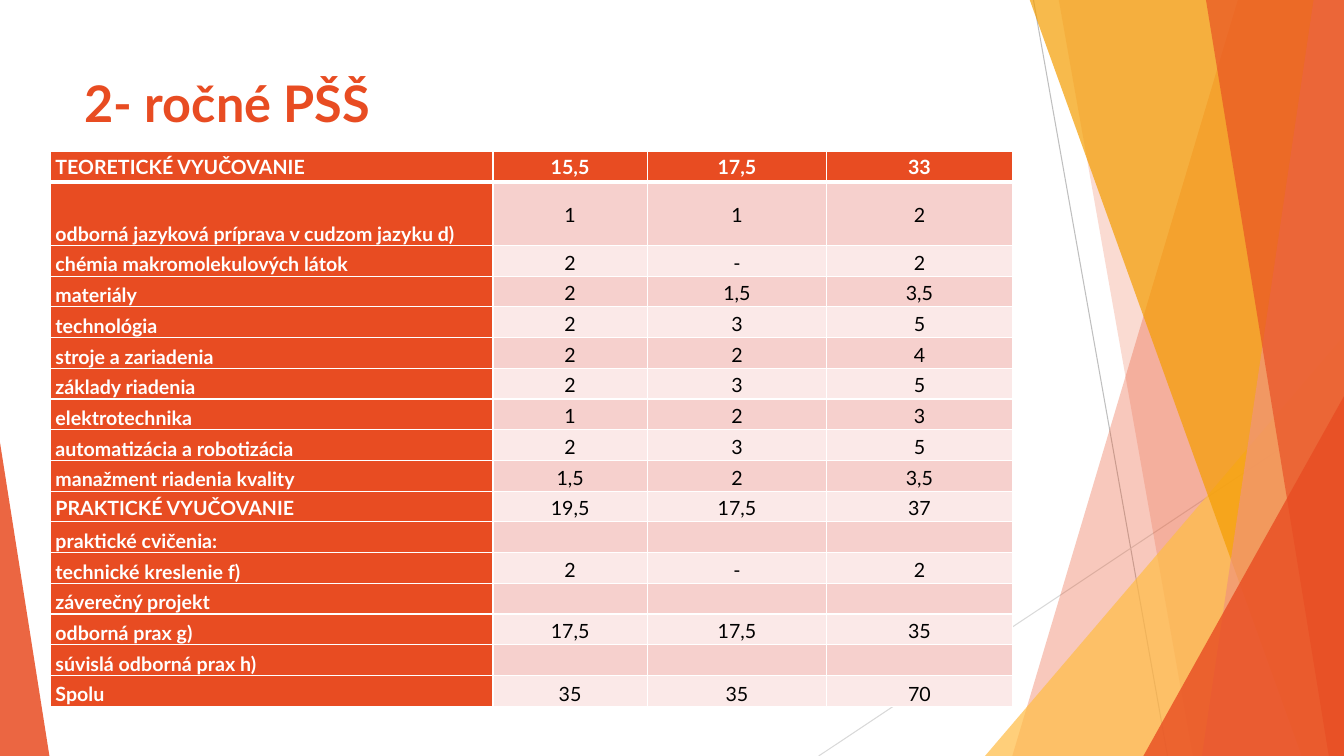
"""Build the slide with the weekly lesson table of the two-year course."""
from dataclasses import dataclass

from lxml import etree
from pptx import Presentation
from pptx.dml.color import RGBColor
from pptx.enum.shapes import MSO_CONNECTOR, MSO_SHAPE
from pptx.enum.text import MSO_ANCHOR, PP_ALIGN
from pptx.oxml.ns import qn
from pptx.util import Inches, Pt

TRIANGLE = MSO_SHAPE.ISOSCELES_TRIANGLE
STRAIGHT = MSO_CONNECTOR.STRAIGHT
TOP, MIDDLE, BOTTOM = MSO_ANCHOR.TOP, MSO_ANCHOR.MIDDLE, MSO_ANCHOR.BOTTOM
LEFT, CENTER = PP_ALIGN.LEFT, PP_ALIGN.CENTER

WIDTH, HEIGHT = 13.33, 7.5
BLEED = -0.01
FONT = "Lato"
COLORS = {
    "orange": "E84C22", "amber": "F49D00", "yellow": "FFBD47", "salmon": "F1947A",
    "white": "FFFFFF", "black": "000000", "pink": "F6D0CD", "pale": "FBE9E8",
    "grey": "BFBFBF", "silver": "D9D9D9",
}


@dataclass
class Ray:
    x1: float
    y1: float
    x2: float
    y2: float
    color: str


@dataclass
class Band:
    top_x: float
    bottom_x: float
    color: str
    alpha: int


@dataclass
class Corner:
    x: float
    y: float
    width: float
    apex: float
    color: str
    alpha: int


@dataclass
class Subject:
    name: str
    hours: tuple[str, str, str]
    name_anchor: MSO_ANCHOR = BOTTOM
    hours_anchor: MSO_ANCHOR = MIDDLE
    height: float = 0.305


RAYS = [
    Ray(10.25, 0, 11.58, HEIGHT, "grey"),
    Ray(WIDTH, 4.03, 8.12, HEIGHT, "silver"),
]
FACETS = [
    Band(12.28, 10.04, "orange", 30),
    Band(10.5, 11.83, "orange", 20),
    Corner(9.77, 3.33, 3.56, 1, "yellow", 72),
    Band(10.21, 12.91, "amber", 70),
    Band(13.03, 11.92, "salmon", 70),
    Band(11.96, 13.18, "orange", 65),
    Corner(11.34, 3.93, 1.99, 1, "orange", 80),
    Corner(0, 4.39, 0.49, 0, "orange", 85),
]
COLUMNS = [4.39, 1.53, 1.78, 1.84]
NO_HOURS = ("", "", "")
SUBJECTS = [
    Subject("TEORETICKÉ VYUČOVANIE", ("15,5", "17,5", "33"), TOP, TOP),
    Subject("odborná jazyková príprava v cudzom jazyku d)", ("1", "1", "2"), height=0.63),
    Subject("chémia makromolekulových látok", ("2", "-", "2")),
    Subject("materiály", ("2", "1,5", "3,5")),
    Subject("technológia", ("2", "3", "5")),
    Subject("stroje a zariadenia", ("2", "2", "4")),
    Subject("základy riadenia", ("2", "3", "5")),
    Subject("elektrotechnika", ("1", "2", "3")),
    Subject("automatizácia a robotizácia", ("2", "3", "5")),
    Subject("manažment riadenia kvality", ("1,5", "2", "3,5")),
    Subject("PRAKTICKÉ VYUČOVANIE", ("19,5", "17,5", "37"), MIDDLE),
    Subject("praktické cvičenia:", NO_HOURS),
    Subject("technické kreslenie f)", ("2", "-", "2")),
    Subject("záverečný projekt", NO_HOURS),
    Subject("odborná prax g)", ("17,5", "17,5", "35")),
    Subject("súvislá odborná prax h)", NO_HOURS),
    Subject("Spolu", ("35", "35", "70"), BOTTOM, BOTTOM),
]


def rgb(name: str) -> RGBColor:
    return RGBColor.from_string(COLORS[name])


def add_run(p, text: str, size: float, color: str, bold: bool) -> None:
    r = p.add_run()
    r.text = text
    r.font.name = FONT
    r.font.size = Pt(size)
    r.font.bold = bold
    r.font.color.rgb = rgb(color)


def draw_ray(s, ray: Ray) -> None:
    line = s.shapes.add_connector(
        STRAIGHT, Inches(ray.x1), Inches(ray.y1), Inches(ray.x2), Inches(ray.y2))
    line.line.color.rgb = rgb(ray.color)
    line.line.width = Pt(0.75)
    etree.SubElement(line._element.spPr, qn("a:effectLst"))


def draw_facet(s, facet: Band | Corner) -> None:
    if isinstance(facet, Band):
        outline = s.shapes.build_freeform(Inches(facet.top_x), Inches(BLEED))
        outline.add_line_segments([
            (Inches(WIDTH), Inches(BLEED)),
            (Inches(WIDTH), Inches(HEIGHT)),
            (Inches(facet.bottom_x), Inches(HEIGHT)),
        ], close=True)
        sp = outline.convert_to_shape()
    else:
        sp = s.shapes.add_shape(
            TRIANGLE, Inches(facet.x), Inches(facet.y),
            Inches(facet.width), Inches(HEIGHT - facet.y))
        sp.adjustments[0] = facet.apex
    sp.shadow.inherit = False
    sp.line.fill.background()
    sp.fill.solid()
    sp.fill.fore_color.rgb = rgb(facet.color)
    color = sp._element.spPr.find(f"{qn('a:solidFill')}/{qn('a:srgbClr')}")
    etree.SubElement(color, qn("a:alpha"), val=str(facet.alpha * 1000))


def draw_title(s, text: str) -> None:
    sp = s.shapes.add_textbox(Inches(0.74), Inches(0.67), Inches(9.4), Inches(1.44))
    tf = sp.text_frame
    tf.word_wrap = True
    tf.vertical_anchor = TOP
    add_run(tf.paragraphs[0], text, 36, "orange", True)


def set_borders(cell, top: float, bottom: float) -> None:
    tc_pr = cell._tc.get_or_add_tcPr()
    sides = {"lnL": 1, "lnR": 1, "lnT": top, "lnB": bottom}
    for i, (side, width) in enumerate(sides.items()):
        ln = etree.Element(qn(f"a:{side}"), w=str(Pt(width)))
        fill = etree.SubElement(ln, qn("a:solidFill"))
        etree.SubElement(fill, qn("a:srgbClr"), val=COLORS["white"])
        tc_pr.insert(i, ln)


def fill_cell(cell, text: str, row: int, col: int, anchor: MSO_ANCHOR) -> None:
    strong = row == 0 or col == 0
    cell.fill.solid()
    cell.fill.fore_color.rgb = rgb("orange" if strong else "pink" if row % 2 else "pale")
    cell.margin_left = cell.margin_right = Inches(0.05)
    cell.margin_top = cell.margin_bottom = 0
    cell.vertical_anchor = anchor
    set_borders(cell, 3 if row == 1 else 1, 3 if row == 0 else 1)
    p = cell.text_frame.paragraphs[0]
    p.alignment = CENTER if col else LEFT
    p.line_spacing = 1.15
    p.space_after = Pt(10)
    if text:
        add_run(p, text, 14, "white" if strong else "black", strong)
    else:
        etree.SubElement(p._p, qn("a:endParaRPr"), sz="1400")


def draw_table(s) -> None:
    height = sum(subject.height for subject in SUBJECTS)
    table = s.shapes.add_table(
        len(SUBJECTS), len(COLUMNS), Inches(0.5), Inches(1.5),
        Inches(sum(COLUMNS)), Inches(height)).table
    table.horz_banding = False
    for col, width in enumerate(COLUMNS):
        table.columns[col].width = Inches(width)
    for row, subject in enumerate(SUBJECTS):
        table.rows[row].height = Inches(subject.height)
        for col, text in enumerate((subject.name, *subject.hours)):
            anchor = subject.hours_anchor if col else subject.name_anchor
            fill_cell(table.cell(row, col), text, row, col, anchor)


def main() -> None:
    prs = Presentation()
    prs.slide_width, prs.slide_height = Inches(WIDTH), Inches(HEIGHT)
    s = prs.slides.add_slide(prs.slide_layouts[6])
    for ray in RAYS:
        draw_ray(s, ray)
    for facet in FACETS:
        draw_facet(s, facet)
    draw_title(s, "2- ročné PŠŠ")
    draw_table(s)
    prs.save("out.pptx")


if __name__ == "__main__":
    main()
